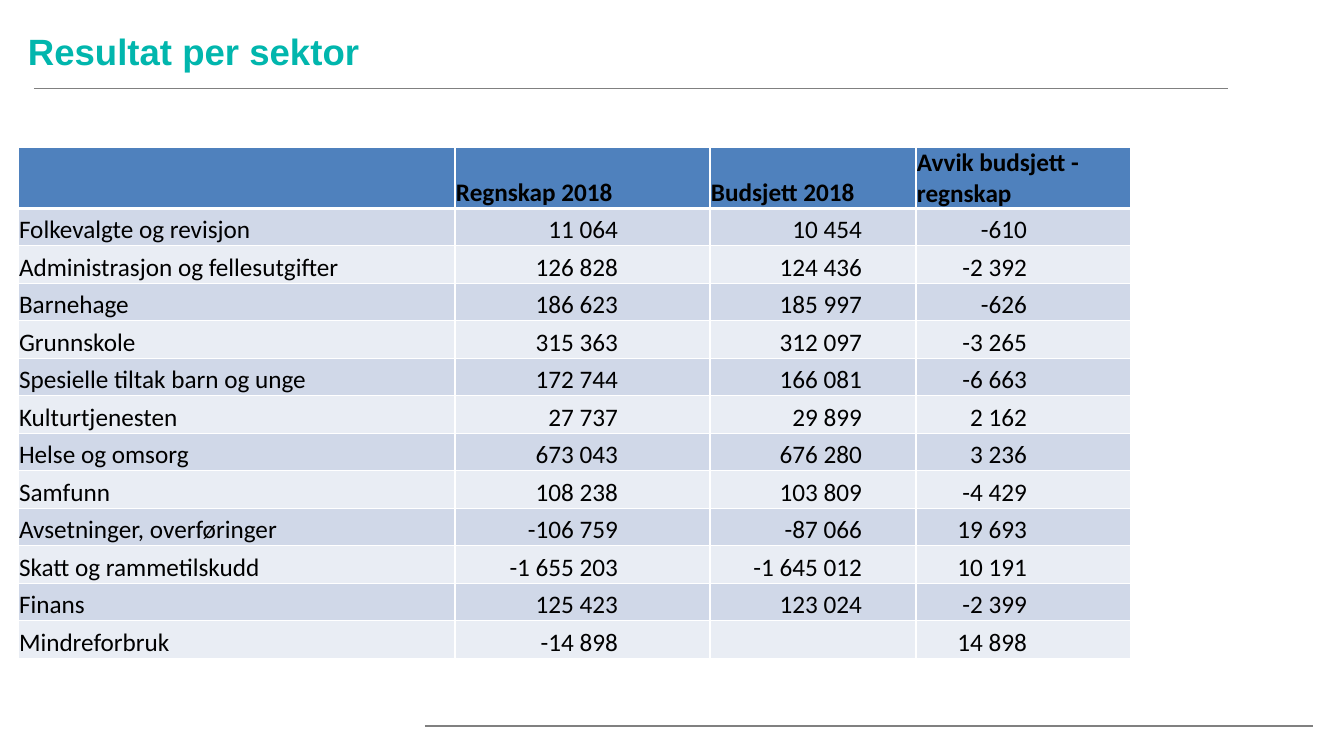
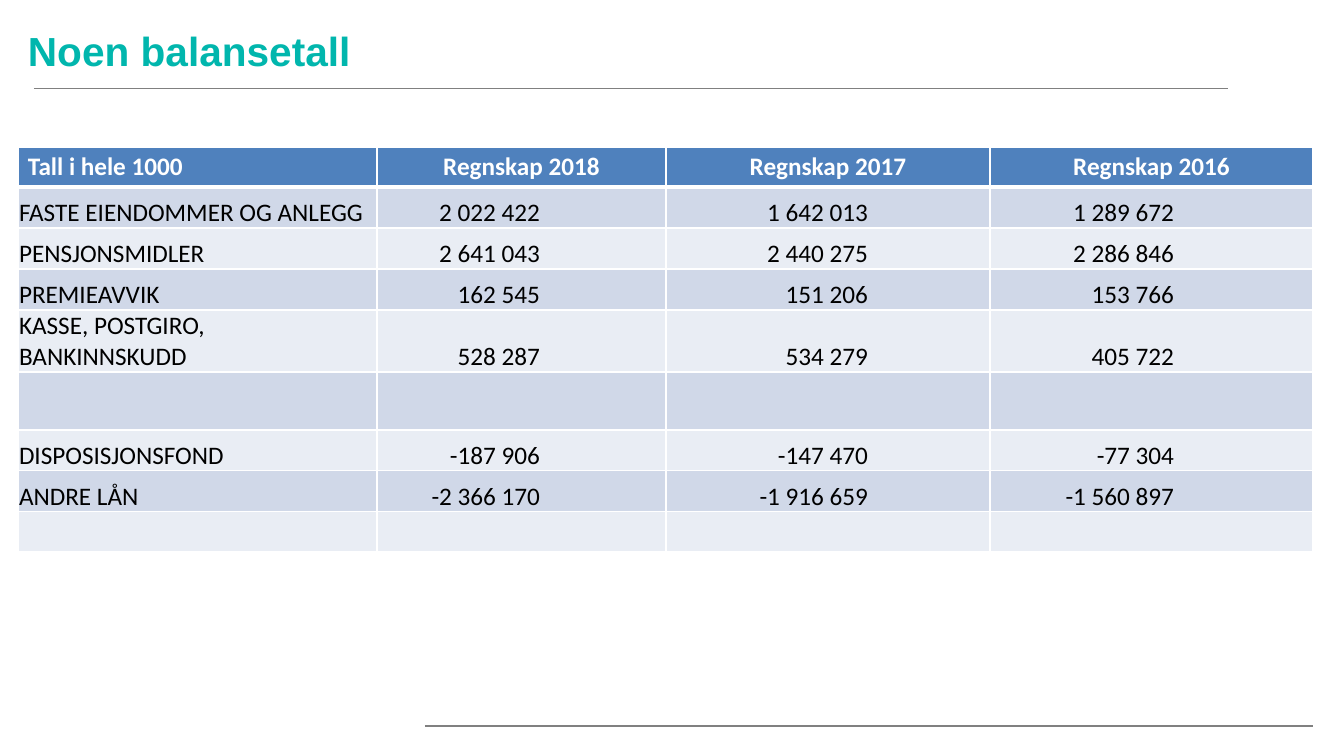
from lxml import etree
from pptx import Presentation
from pptx.dml.color import RGBColor
from pptx.enum.shapes import MSO_CONNECTOR as CONNECTOR
from pptx.enum.text import MSO_ANCHOR as ANCHOR, PP_ALIGN as ALIGN
from pptx.oxml.ns import qn
from pptx.util import Emu, Pt

SCALE = 914400 / 100.8
WIDTH, HEIGHT = 1344, 756
LEFT, TABLE_TOP = 18, 147

TEAL = RGBColor(0x01, 0xB6, 0xAD)
GREY = RGBColor(0x80, 0x80, 0x80)
BLUE = RGBColor(0x4F, 0x81, 0xBD)
BAND_DARK = RGBColor(0xD0, 0xD8, 0xE8)
BAND_LIGHT = RGBColor(0xE9, 0xED, 0xF4)
BLACK = RGBColor(0, 0, 0)
WHITE = RGBColor(0xFF, 0xFF, 0xFF)

SECTOR_ROWS = [
    ("", "Regnskap 2018", "Budsjett 2018", "Avvik budsjett - regnskap"),
    ("Folkevalgte og revisjon", "11 064", "10 454", "-610"),
    ("Administrasjon og fellesutgifter", "126 828", "124 436", "-2 392"),
    ("Barnehage", "186 623", "185 997", "-626"),
    ("Grunnskole", "315 363", "312 097", "-3 265"),
    ("Spesielle tiltak barn og unge", "172 744", "166 081", "-6 663"),
    ("Kulturtjenesten", "27 737", "29 899", "2 162"),
    ("Helse og omsorg", "673 043", "676 280", "3 236"),
    ("Samfunn", "108 238", "103 809", "-4 429"),
    ("Avsetninger, overføringer", "-106 759", "-87 066", "19 693"),
    ("Skatt og rammetilskudd", "-1 655 203", "-1 645 012", "10 191"),
    ("Finans", "125 423", "123 024", "-2 399"),
    ("Mindreforbruk", "-14 898", "", "14 898"),
]

BALANCE_ROWS = [
    ("Tall i hele 1000", "Regnskap 2018", "Regnskap 2017", "Regnskap 2016"),
    ("FASTE EIENDOMMER OG ANLEGG", "2 022 422", "1 642 013", "1 289 672"),
    ("PENSJONSMIDLER", "2 641 043", "2 440 275", "2 286 846"),
    ("PREMIEAVVIK", "162 545", "151 206", "153 766"),
    ("KASSE, POSTGIRO, BANKINNSKUDD", "528 287", "534 279", "405 722"),
    ("", "", "", ""),
    ("DISPOSISJONSFOND", "-187 906", "-147 470", "-77 304"),
    ("ANDRE LÅN", "-2 366 170", "-1 916 659", "-1 560 897"),
    ("", "", "", ""),
]


def px(n):
    return Emu(round(n * SCALE))


def write(tf, text, size=18, font="Calibri", color=BLACK, bold=False, align=ALIGN.LEFT):
    tf.word_wrap = True
    p = tf.paragraphs[0]
    p.alignment = align
    if text:
        r = p.add_run()
        r.text = text
        r.font.size = Pt(size)
        r.font.name = font
        r.font.bold = bold
        r.font.color.rgb = color


def add_rule(s, x1, x2, y, width):
    line = s.shapes.add_connector(CONNECTOR.STRAIGHT, px(x1), px(y), px(x2), px(y))
    line.line.color.rgb = GREY
    line.line.width = Pt(width)
    etree.SubElement(line._element.spPr, qn("a:effectLst"))


def add_titled_slide(prs, title, size):
    s = prs.slides.add_slide(prs.slide_layouts[6])
    add_rule(s, 34, 1228, 88, 0.5)
    add_rule(s, 425, 1313, 726, 0.75)
    sp = s.shapes.add_textbox(px(LEFT), px(22), px(1133), px(57))
    sp.text_frame.vertical_anchor = ANCHOR.MIDDLE
    write(sp.text_frame, title, size=size, font="Arial", color=TEAL, bold=True)
    return s


def set_borders(cell, bottom):
    tc_pr = cell._tc.get_or_add_tcPr()
    for i, (side, width) in enumerate((("L", 1), ("R", 1), ("T", 1), ("B", bottom))):
        ln = etree.Element(qn(f"a:ln{side}"), w=str(Pt(width)))
        fill = etree.SubElement(ln, qn("a:solidFill"))
        etree.SubElement(fill, qn("a:srgbClr"), val=str(WHITE))
        tc_pr.insert(i, ln)


def set_cell(cell, text, fill, left=1, top=1, right=1, anchor=ANCHOR.BOTTOM, bottom_border=1, **fmt):
    cell.fill.solid()
    cell.fill.fore_color.rgb = fill
    cell.margin_left, cell.margin_top = px(left), px(top)
    cell.margin_right, cell.margin_bottom = px(right), 0
    cell.vertical_anchor = anchor
    set_borders(cell, bottom_border)
    write(cell.text_frame, text, **fmt)


def add_figures(s, rows, widths, heights, insets, header_formats):
    table = s.shapes.add_table(len(rows), len(widths), px(LEFT), px(TABLE_TOP),
                               px(sum(widths)), px(sum(heights))).table
    for column, width in zip(table.columns, widths):
        column.width = px(width)
    for i, (row, height) in enumerate(zip(rows, heights)):
        table.rows[i].height = px(height)
        band = BAND_DARK if i % 2 else BAND_LIGHT
        for j, text in enumerate(row):
            cell = table.cell(i, j)
            if i == 0:
                set_cell(cell, text, BLUE, bottom_border=3, bold=True, **header_formats[j])
            else:
                set_cell(cell, text, band, right=insets[j],
                         align=ALIGN.RIGHT if j else ALIGN.LEFT)


def main():
    prs = Presentation()
    prs.slide_width, prs.slide_height = px(WIDTH), px(HEIGHT)

    s = add_titled_slide(prs, "Resultat per sektor", 26.1)
    add_figures(s, SECTOR_ROWS, [437, 255, 206, 215], [61] + [37, 38] * 6,
                [1, 92, 54, 104], [{}] * 4)

    s = add_titled_slide(prs, "Noen balansetall", 29)
    label = dict(color=WHITE, anchor=ANCHOR.TOP, left=10, top=5)
    year = label | dict(right=10, align=ALIGN.CENTER)
    add_figures(s, BALANCE_ROWS, [359, 289, 324, 323],
                [40, 41, 41, 41, 62, 58, 41, 41, 40],
                [1, 126, 122, 139], [label] + [year] * 3)

    prs.save("out.pptx")


if __name__ == "__main__":
    main()
